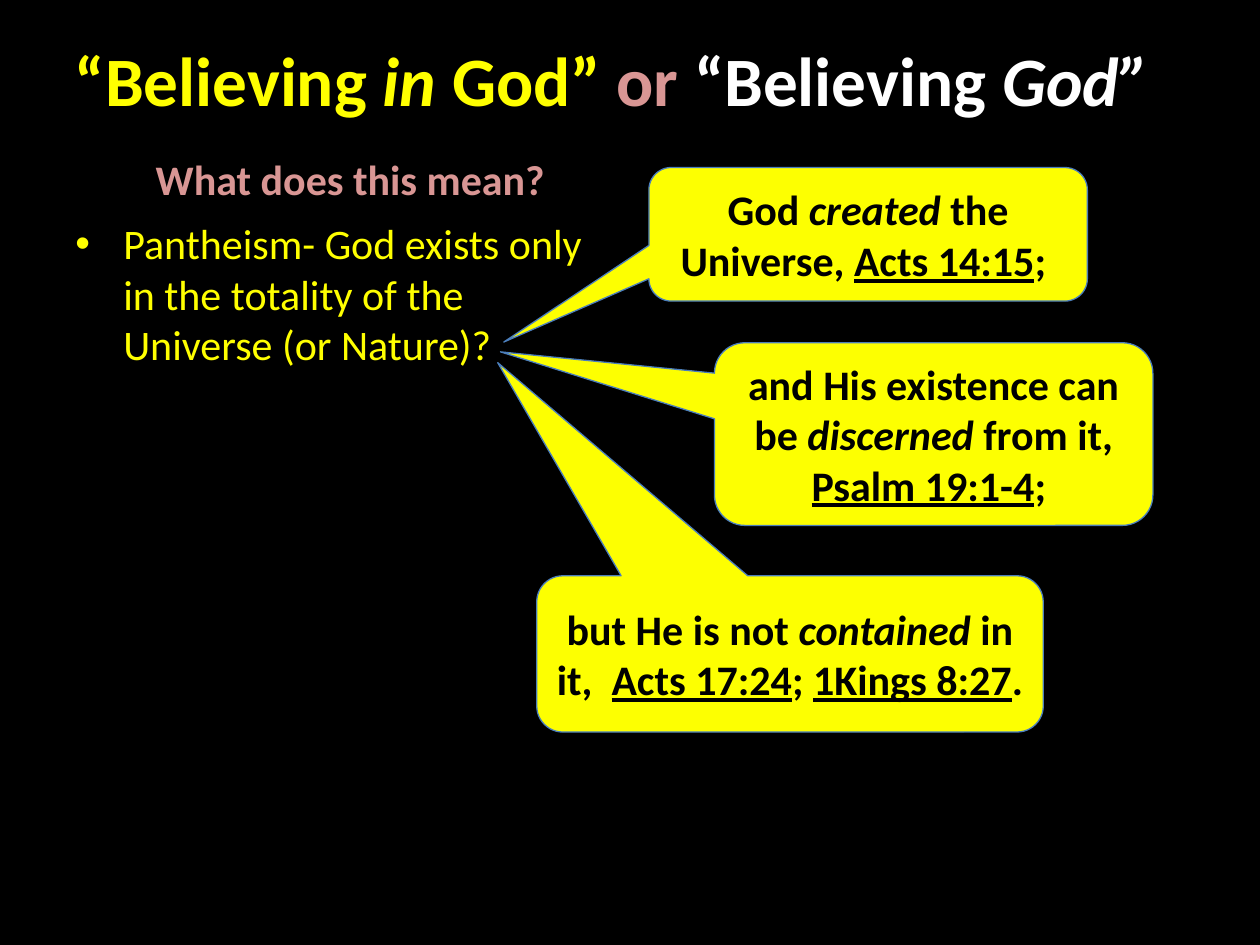
from lxml import etree
from pptx import Presentation, util as u
from pptx.dml.color import RGBColor
from pptx.enum import shapes, text
from pptx.oxml.ns import qn

YELLOW, ROSE, WHITE, BLACK = "FFFF00", "D99694", "FFFFFF", "000000"
CALLOUT_FILL, CALLOUT_LINE = "FDFF01", "4B7EBC"
BODY_SIZE = 24

# Spans are (words, style, colour); style holds "i" for italic, "u" for underline.
TITLE = [
    ("“Believing ", "", YELLOW), ("in ", "i", YELLOW), ("God” ", "", YELLOW),
    ("or", "", ROSE), (" “Believing ", "", WHITE), ("God”", "i", WHITE),
]
QUESTION = [("What does this mean?", "", ROSE)]
PANTHEISM = [("Pantheism- God exists only in the totality of the Universe (or Nature)?", "", YELLOW)]

# (left, top, width, height), pointer tip as shares of the size from the centre, spans
CALLOUTS = [
    ((4.26, 4.57, 4.02, 1.24), (-0.577, -1.864),
     [("but He is not ", ""), ("contained ", "i"), ("in it,  ", ""),
      ("Acts 17:24", "u"), ("; ", ""), ("1Kings 8:27", "u"), (". ", "")]),
    ((5.15, 1.33, 3.48, 1.06), (-0.831, 0.807),
     [("God ", ""), ("created ", "i"), ("the Universe, ", ""),
      ("Acts 14:15", "u"), ("; ", "")]),
    ((5.67, 2.72, 3.48, 1.45), (-0.988, -0.45),
     [("and His existence can be ", ""), ("discerned ", "i"), ("from it, ", ""),
      ("Psalm 19:1-4", "u"), ("; ", "")]),
]


def colour(value):
    return RGBColor.from_string(value)


def inches(lengths):
    return [u.Inches(length) for length in lengths]


def write(box, spans, size=BODY_SIZE, bold=True, align=text.PP_ALIGN.CENTER,
          anchor=text.MSO_ANCHOR.MIDDLE, before=0):
    frame = box.text_frame
    frame.word_wrap = True
    frame.vertical_anchor = anchor
    para = frame.paragraphs[0]
    para.alignment = align
    para.space_before = u.Pt(before)
    para.font.name, para.font.size, para.font.bold = "Calibri", u.Pt(size), bold
    for words, style, hue in spans:
        span = para.add_run()
        span.text = words
        span.font.color.rgb = colour(hue)
        if "i" in style:
            span.font.italic = True
        if "u" in style:
            span.font.underline = True
    return para


def add_bullet(para, indent):
    properties = para._p.get_or_add_pPr()
    properties.set("marL", str(u.Inches(indent)))
    properties.set("indent", str(-u.Inches(indent)))
    etree.SubElement(properties, qn("a:buFont")).set("typeface", "Arial")
    bullet = etree.SubElement(properties, qn("a:buChar"))
    bullet.set("char", "•")
    # The schema wants the default run properties after the bullet.
    properties.append(properties.find(qn("a:defRPr")))


def add_callout(page, place, tip, spans):
    box = page.shapes.add_shape(shapes.MSO_SHAPE.ROUNDED_RECTANGULAR_CALLOUT, *inches(place))
    for index, value in enumerate((*tip, 0.167)):
        box.adjustments[index] = value
    box.shadow.inherit = False
    box.fill.solid()
    box.fill.fore_color.rgb = colour(CALLOUT_FILL)
    box.line.color.rgb = colour(CALLOUT_LINE)
    box.line.width = u.Pt(0.75)
    write(box, [(*span, BLACK) for span in spans])


def main():
    deck = Presentation()
    deck.slide_width, deck.slide_height = inches((10, 7.5))
    page = deck.slides.add_slide(deck.slide_layouts[6])
    page.background.fill.solid()
    page.background.fill.fore_color.rgb = colour(BLACK)

    write(page.shapes.add_textbox(*inches((0.36, 0, 9, 1.25))), TITLE, size=39.6)
    gap = BODY_SIZE * 0.2
    write(page.shapes.add_textbox(*inches((0.57, 1.07, 4.42, 0.7))), QUESTION, before=gap)
    point = write(page.shapes.add_textbox(*inches((0.5, 1.68, 4.42, 5.6))), PANTHEISM,
                  bold=False, align=text.PP_ALIGN.LEFT,
                  anchor=text.MSO_ANCHOR.TOP, before=gap)
    add_bullet(point, 0.38)

    for place, tip, spans in CALLOUTS:
        add_callout(page, place, tip, spans)
    deck.save("out.pptx")


if __name__ == "__main__":
    main()
